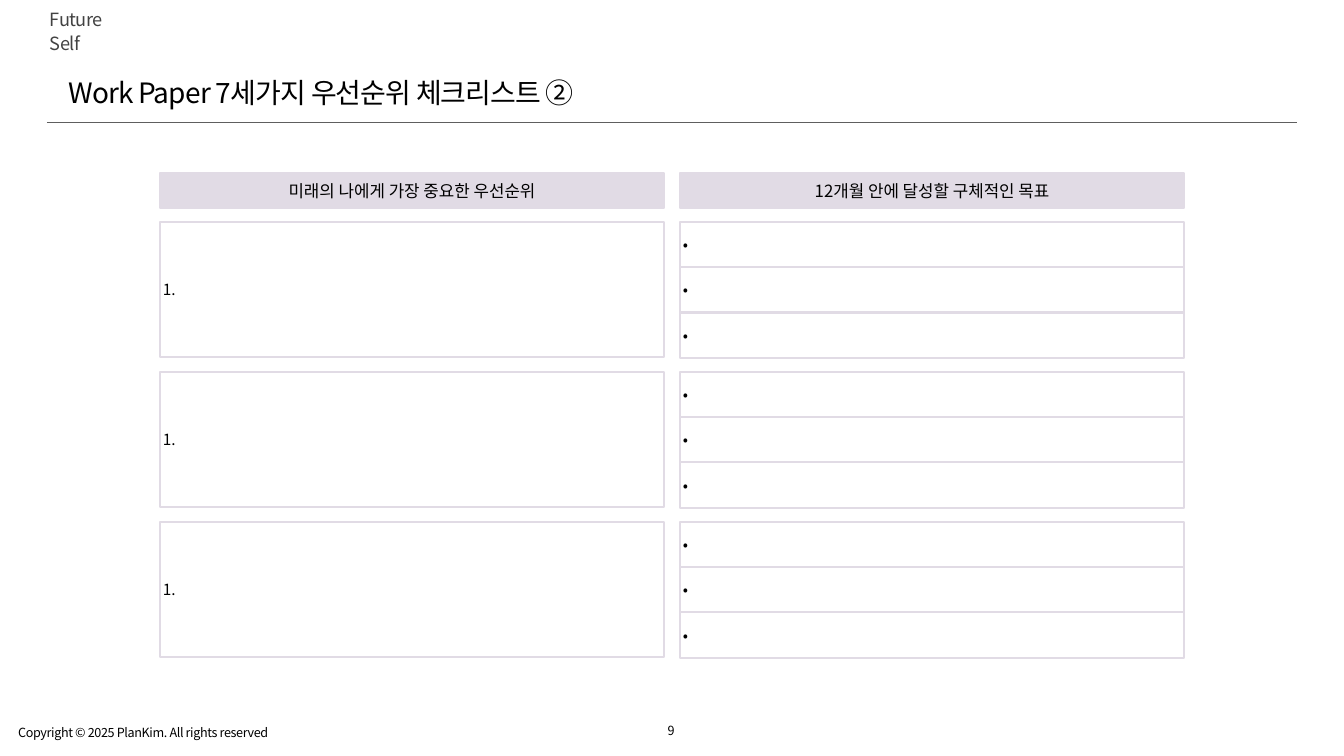
"""Build the three-priorities checklist work paper slide."""
from dataclasses import dataclass

from lxml import etree
from pptx import Presentation
from pptx.dml.color import RGBColor
from pptx.enum.shapes import MSO_CONNECTOR, MSO_SHAPE
from pptx.enum.text import MSO_ANCHOR, PP_ALIGN
from pptx.oxml.ns import qn
from pptx.util import Inches, Pt

RECT = MSO_SHAPE.RECTANGLE
STRAIGHT = MSO_CONNECTOR.STRAIGHT
MIDDLE, BOTTOM = MSO_ANCHOR.MIDDLE, MSO_ANCHOR.BOTTOM
LEFT, CENTER = PP_ALIGN.LEFT, PP_ALIGN.CENTER

FONT = "Noto Sans CJK KR"
COLORS = {"text": "000000", "brand": "424242", "rule": "5E5E5E", "lilac": "E1DBE5"}
MARGINS = dict.fromkeys(
    ("margin_left", "margin_top", "margin_right", "margin_bottom"), Inches(0.06)
)

LEFT_X, RIGHT_X, COL_W = 3.17, 13.49, 10.01
HEAD_Y, HEAD_H = 3.44, 0.69
BODY_Y, BLOCK_H, BLOCK_PITCH = 4.4, 2.69, 2.975
GOAL_H = 0.9
BLOCKS, GOALS = 3, 3


@dataclass
class Label:
    """Text with its frame and format."""

    text: str
    x: float
    y: float
    w: float
    h: float
    size: float
    color: str = "text"
    align: int = LEFT
    anchor: int = MIDDLE
    spacing: float = 0
    line: float = 1.0
    wrap: bool = True


@dataclass
class Column:
    """Heading of one checklist column."""

    x: float
    title: str


LABELS = [
    Label("Future Self", 0.93, 0.32, 1.62, 0.54, 26, "brand", spacing=-0.8, line=1.1),
    Label("Copyright © 2025 PlanKim. All rights reserved", 0.3, 14.31, 6.06, 0.4, 18,
          spacing=-0.5, line=1.1),
    Label("9", 13.19, 14.31, 0.26, 0.4, 18, align=CENTER, anchor=BOTTOM, wrap=False),
    Label("Work Paper 7세가지 우선순위 체크리스트 ②", 1.3, 1.41, 10.82, 0.78, 40,
          spacing=-1.2, line=1.1),
]
COLUMNS = [
    Column(LEFT_X, "미래의 나에게 가장 중요한 우선순위"),
    Column(RIGHT_X, "12개월 안에 달성할 구체적인 목표"),
]


def rgb(name: str) -> RGBColor:
    """Look up a named colour."""
    return RGBColor.from_string(COLORS[name])


def frame(label: Label) -> list:
    """Return the position and size of a label."""
    return [Inches(v) for v in (label.x, label.y, label.w, label.h)]


def write(sp, label: Label) -> None:
    """Put formatted text into a shape."""
    tf = sp.text_frame
    settings = {**MARGINS, "word_wrap": label.wrap, "vertical_anchor": label.anchor}
    for name, value in settings.items():
        setattr(tf, name, value)
    p = tf.paragraphs[0]
    p.alignment, p.line_spacing = label.align, label.line
    r = p.add_run()
    r.text = label.text
    for name, value in {"name": FONT, "size": Pt(label.size)}.items():
        setattr(r.font, name, value)
    r.font.color.rgb = rgb(label.color)
    props = r.font._element
    props.set("spc", str(round(label.spacing * 100)))
    latin = props.find(qn("a:latin"))
    ea = etree.Element(qn("a:ea"), typeface=FONT)
    latin.addnext(ea)


def add_label(shapes, label: Label) -> None:
    """Draw a plain text box."""
    write(shapes.add_textbox(*frame(label)), label)


def add_box(shapes, label: Label, filled: bool = False) -> None:
    """Draw an outlined box with text."""
    sp = shapes.add_shape(RECT, *frame(label))
    sp.shadow.inherit = False
    if filled:
        sp.fill.solid()
        sp.fill.fore_color.rgb = rgb("lilac")
    else:
        sp.fill.background()
    sp.line.color.rgb = rgb("lilac")
    sp.line.width = Pt(3)
    write(sp, label)


def add_rule(shapes, x1: float, x2: float, y: float) -> None:
    """Draw the horizontal line below the title."""
    line = shapes.add_connector(STRAIGHT, Inches(x1), Inches(y), Inches(x2), Inches(y))
    line.line.color.rgb = rgb("rule")
    line.line.width = Pt(1)
    etree.SubElement(line._element.spPr, qn("a:effectLst"))


def add_block(shapes, y: float) -> None:
    """Draw one priority with its group of goals."""
    add_box(shapes, Label("1.", LEFT_X, y, COL_W, BLOCK_H, 22))
    goals = shapes.add_group_shape().shapes
    for i in range(GOALS):
        add_box(goals, Label("•", RIGHT_X, y + i * GOAL_H, COL_W, GOAL_H, 22))


def main() -> None:
    """Build and save the slide."""
    prs = Presentation()
    prs.slide_width, prs.slide_height = Inches(26.67), Inches(15)
    s = prs.slides.add_slide(prs.slide_layouts[6])
    add_rule(s.shapes, 0.93, 25.74, 2.43)
    for label in LABELS:
        add_label(s.shapes, label)
    for col in COLUMNS:
        heading = Label(col.title, col.x, HEAD_Y, COL_W, HEAD_H, 24, align=CENTER)
        add_box(s.shapes, heading, filled=True)
    for i in range(BLOCKS):
        add_block(s.shapes, BODY_Y + i * BLOCK_PITCH)
    prs.save("out.pptx")


if __name__ == "__main__":
    main()
